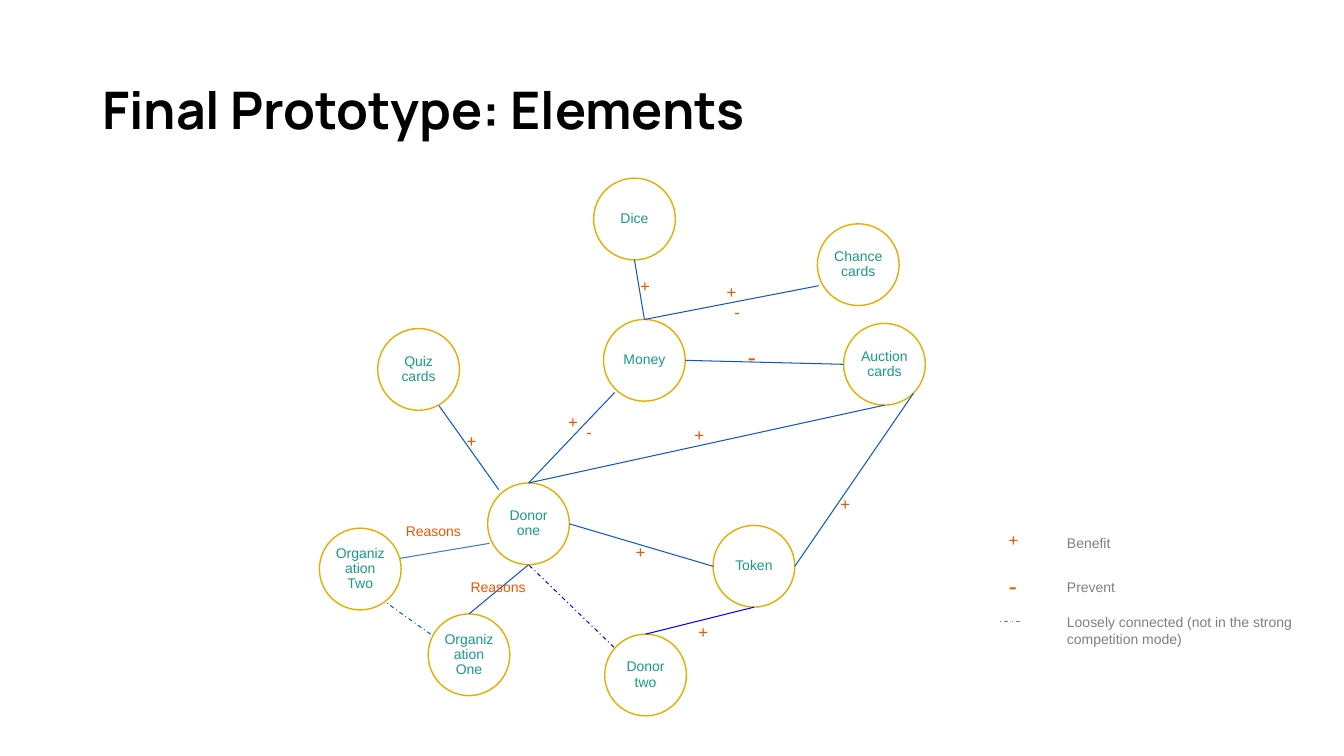
from lxml import etree
from pptx import Presentation
from pptx.dml.color import RGBColor
from pptx.enum.dml import MSO_LINE
from pptx.enum.shapes import MSO_CONNECTOR, MSO_SHAPE
from pptx.enum.text import MSO_ANCHOR, MSO_AUTO_SIZE, PP_ALIGN
from pptx.oxml.ns import qn
from pptx.util import Cm, Pt

STRAIGHT = MSO_CONNECTOR.STRAIGHT
OVAL = MSO_SHAPE.OVAL
DASH_DOT = MSO_LINE.DASH_DOT
MIDDLE, UPPER = MSO_ANCHOR.MIDDLE, MSO_ANCHOR.TOP
LEFT_ALIGN, CENTER = PP_ALIGN.LEFT, PP_ALIGN.CENTER
NO_AUTOFIT = MSO_AUTO_SIZE.NONE

COLORS = {
    "title": "000000", "node fill": "FFFFFF", "node line": "E6AD00",
    "node text": "1A9988", "sign": "EB5600", "legend text": "7F7F7F",
    "link": "1155CC", "donor two link": "0000FF",
    "reason link": "3C78D8", "legend line": "4A86E8",
}

# All lengths below are centimetres.
RADIUS = 1.03
TOP, BOTTOM = (0, -RADIUS), (0, RADIUS)
LEFT, RIGHT = (-RADIUS, 0), (RADIUS, 0)
SIGN_SIZE, BIG_SIGN_SIZE = (0.66, 0.76), (0.84, 1.02)
TEXT_INSETS, NODE_INSETS = (0.25, 0.13), (0.03, 0.03)

# Centres of the circles, from the corner of the network box
NODES = {
    "Donor one": (5.32, 8.7), "Auction cards": (14.29, 4.68),
    "Organization Two": (1.08, 9.84), "Organization One": (3.82, 12),
    "Donor two": (8.27, 12.51), "Chance cards": (13.63, 2.17),
    "Dice": (7.99, 1.02), "Money": (8.24, 4.58),
    "Token": (11, 9.77), "Quiz cards": (2.55, 4.81),
}

# Node and offset from its centre at each end, colour, dash
LINKS = [
    ("Quiz cards", (0.51, 0.91), "Donor one", (-0.75, -0.86), "link", None),
    ("Auction cards", BOTTOM, "Donor one", TOP, "link", None),
    ("Token", LEFT, "Donor one", RIGHT, "link", None),
    ("Money", (-0.75, 0.81), "Donor one", TOP, "link", None),
    ("Token", RIGHT, "Auction cards", (0.73, 0.73), "link", None),
    ("Auction cards", LEFT, "Money", RIGHT, "link", None),
    ("Chance cards", (-1, 0.53), "Money", TOP, "link", None),
    ("Dice", BOTTOM, "Money", TOP, "link", None),
    ("Donor one", BOTTOM, "Organization One", TOP, "link", None),
    ("Token", BOTTOM, "Donor two", TOP, "donor two link", None),
    ("Donor two", (-0.8, -0.7), "Donor one", BOTTOM, "donor two link", DASH_DOT),
    ("Organization One", (-0.97, -0.52), "Organization Two", (0.62, 0.82),
     "link", DASH_DOT),
    ("Donor one", (-0.98, 0.49), "Organization Two", (1, -0.27),
     "reason link", None),
]

# Text, corner, box size, points
SIGNS = [
    ("+", (3.51, 6.22), SIGN_SIZE, 12),
    ("+", (12.93, 7.82), SIGN_SIZE, 12),
    ("+", (6.07, 5.74), SIGN_SIZE, 12),
    ("-", (6.53, 5.99), SIGN_SIZE, 12),
    ("+", (9.25, 6.07), SIGN_SIZE, 12),
    ("+", (7.77, 9.01), SIGN_SIZE, 12),
    ("-", (10.59, 3.96), BIG_SIGN_SIZE, 18),
    ("+", (10.06, 2.46), SIGN_SIZE, 12),
    ("-", (10.26, 2.97), SIGN_SIZE, 12),
    ("+", (7.88, 2.33), SIGN_SIZE, 12),
    ("+", (9.35, 11.04), SIGN_SIZE, 12),
    ("Reasons", (3.61, 9.95), (2.72, 0.71), 10),
    ("Reasons", (1.98, 8.53), (2.26, 0.71), 10),
]


def color(name):
    return RGBColor.from_string(COLORS[name])


def shift(point, offset):
    return point[0] + offset[0], point[1] + offset[1]


def write(shape, text, *, size, ink, font="Arial", bold=False, align=LEFT_ALIGN,
          anchor=UPPER, spacing=1.0, insets=TEXT_INSETS):
    """Fill a shape with text, one paragraph for each line."""
    frame = shape.text_frame
    frame.word_wrap = True
    frame.auto_size = NO_AUTOFIT
    frame.vertical_anchor = anchor
    frame.margin_left = frame.margin_right = Cm(insets[0])
    frame.margin_top = frame.margin_bottom = Cm(insets[1])
    frame.text = text
    for para in frame.paragraphs:
        para.alignment = align
        para.line_spacing = spacing
        for span in para.runs:
            span.font.name = font
            span.font.size = Pt(size)
            span.font.bold = bold
            span.font.color.rgb = color(ink)


def add_label(page, text, corner, extent, **style):
    box = page.shapes.add_textbox(*map(Cm, corner + extent))
    write(box, text, **style)


def add_line(page, start, end, ink, dash=None):
    line = page.shapes.add_connector(STRAIGHT, *map(Cm, start + end))
    line.line.color.rgb = color(ink)
    line.line.width = Pt(0.75)
    if dash is not None:
        line.line.dash_style = dash
    etree.SubElement(line._element.spPr, qn("a:effectLst"))


def add_node(page, name, center):
    corner = shift(center, (-RADIUS, -RADIUS))
    node = page.shapes.add_shape(OVAL, *map(Cm, corner + (2 * RADIUS, 2 * RADIUS)))
    node.shadow.inherit = False
    node.fill.solid()
    node.fill.fore_color.rgb = color("node fill")
    node.line.color.rgb = color("node line")
    node.line.width = Pt(1)
    write(node, name, size=10, ink="node text", align=CENTER, anchor=MIDDLE,
          spacing=0.9, insets=NODE_INSETS)


def place_title(page, left, top, width, height):
    title = page.shapes.title
    title.left, title.top = Cm(left), Cm(top)
    title.width, title.height = Cm(width), Cm(height)
    write(title, "Final Prototype: Elements", size=37, ink="title", font="Manrope",
          bold=True, anchor=MIDDLE, spacing=0.9)


def draw_network(page, left, top):
    corner = (left, top)
    centers = {name: shift(corner, center) for name, center in NODES.items()}
    for name, center in centers.items():
        add_node(page, name, center)
    for source, leave, target, arrive, ink, dash in LINKS:
        add_line(page, shift(centers[source], leave),
                 shift(centers[target], arrive), ink, dash)
    for text, offset, extent, size in SIGNS:
        add_label(page, text, shift(corner, offset), extent, size=size, ink="sign")


def draw_legend(page, left, top):
    corner = (left, top)
    add_label(page, "+", corner, SIGN_SIZE, size=12, ink="sign")
    add_label(page, "-", shift(corner, (0, 1.02)), BIG_SIGN_SIZE, size=18, ink="sign")
    add_line(page, shift(corner, (0.53, 2.44)), shift(corner, (0.03, 2.44)),
             "legend line", DASH_DOT)
    meanings = [
        ("Benefit", 0.11, (2.49, 0.69)),
        ("Prevent", 1.22, (2.13, 0.69)),
        ("Loosely connected (not in the strong\ncompetition mode)", 2.11, (6.22, 1.12)),
    ]
    for text, drop, extent in meanings:
        add_label(page, text, shift(corner, (1.47, drop)), extent,
                  size=10, ink="legend text")


def main():
    deck = Presentation()
    deck.slide_width, deck.slide_height = Cm(33.87), Cm(19.05)
    page = deck.slides.add_slide(deck.slide_layouts.get_by_name("Title Only"))
    place_title(page, 2.33, 1.01, 29.21, 3.68)
    draw_network(page, 8, 4.5)
    draw_legend(page, 25.17, 13.23)
    deck.save("out.pptx")


if __name__ == "__main__":
    main()
